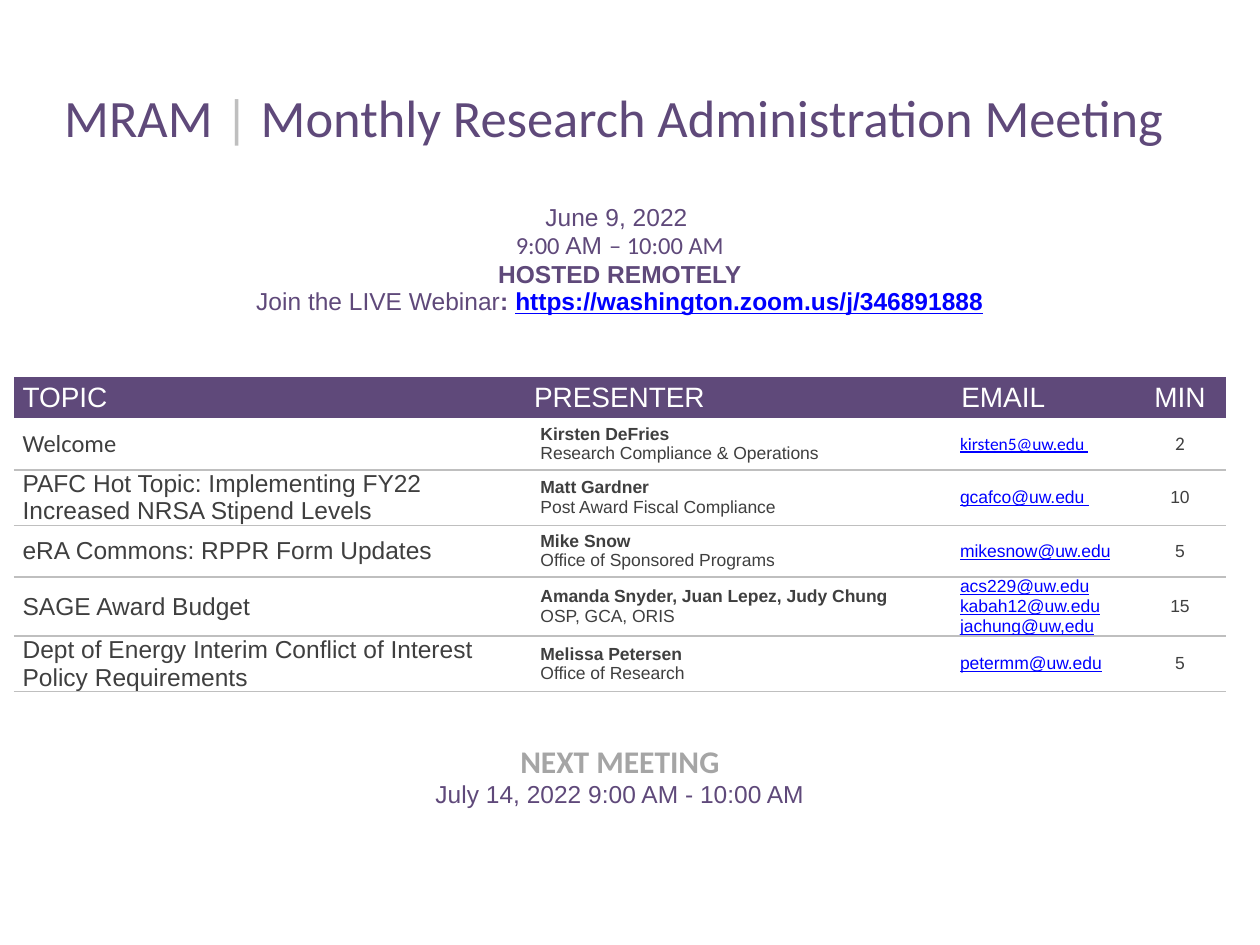
from lxml.etree import SubElement
from pptx import Presentation
from pptx.dml.color import RGBColor
from pptx.enum.text import MSO_ANCHOR, PP_ALIGN
from pptx.oxml.ns import qn
from pptx.util import Inches, Pt

INK = {"plum": "5F497A", "gray": "BFBFBF", "mid": "A5A5A5",
       "dark": "3F3F3F", "blue": "0000FF", "white": "FFFFFF"}

TITLE = [[("MRAM ", "Calibri", 30, "plum", False),
          ("|", "Calibri", 30, "gray", False),
          (" Monthly Research Administration Meeting ", "Calibri", 30, "plum", False)]]
WHEN = [[("June 9, 2022 ", "Arial", 14, "plum", False)],
        [("9:00 ", "Calibri", 14, "plum", False),
         ("AM ", "Arial", 14, "plum", False),
         ("– 10:00 AM", "Calibri", 14, "plum", False)],
        [("HOSTED REMOTELY", "Arial", 14, "plum", True)],
        [("Join the LIVE Webinar", "Arial", 14, "plum", False),
         (": ", "Arial", 14, "plum", True),
         ("https://washington.zoom.us/j/346891888", "Arial", 14, "blue", True)]]
NEXT = [[("NEXT MEETING", "Calibri", 18, "mid", True)],
        [("July 14, 2022 9:00 AM - 10:00 AM", "Arial", 14, "plum", False)]]
HEADS = ["TOPIC", "PRESENTER", "EMAIL", "MIN"]
TALKS = [
    ("Welcome", "Kirsten DeFries", "Research Compliance & Operations",
     ["kirsten5@uw.edu "], "2"),
    ("PAFC Hot Topic: Implementing FY22 Increased NRSA Stipend Levels",
     "Matt Gardner", "Post Award Fiscal Compliance", ["gcafco@uw.edu "], "10"),
    ("eRA Commons: RPPR Form Updates", "Mike Snow",
     "Office of Sponsored Programs", ["mikesnow@uw.edu"], "5"),
    ("SAGE Award Budget", "Amanda Snyder, Juan Lepez, Judy Chung",
     "OSP, GCA, ORIS", ["acs229@uw.edu", "kabah12@uw.edu", "jachung@uw,edu"], "15"),
    ("Dept of Energy Interim Conflict of Interest Policy Requirements",
     "Melissa Petersen", "Office of Research", ["petermm@uw.edu"], "5"),
]
WIDTHS = [4.06, 3.33, 1.5, 0.73]
HEIGHTS = [0.62, 1.79, 0.33, 0.41, 0.44, 0.41, 0.47, 0.44, 0.95]
FIRST = 3
LAST = FIRST + len(TALKS)


def rule(props, side, shown):
    line = SubElement(props, qn("a:" + side), w=str(Pt(1)))
    if shown:
        fill = SubElement(line, qn("a:solidFill"))
        SubElement(fill, qn("a:srgbClr"), val=INK["gray"])
    else:
        SubElement(line, qn("a:noFill"))


def write(row, col, paras, fill="white", center=False, left=0.07, right=0.07,
          top=0, bottom=0, anchor=MSO_ANCHOR.MIDDLE):
    cell = grid.cell(row, col)
    props = cell._tc.get_or_add_tcPr()
    for side, shown in [("lnL", False), ("lnR", False),
                        ("lnT", FIRST < row <= LAST), ("lnB", FIRST <= row < LAST)]:
        rule(props, side, shown)
    cell.fill.solid()
    cell.fill.fore_color.rgb = RGBColor.from_string(INK[fill])
    cell.margin_left, cell.margin_right = Inches(left), Inches(right)
    cell.margin_top, cell.margin_bottom = Inches(top), Inches(bottom)
    cell.vertical_anchor = anchor
    frame = cell.text_frame
    frame.text = "\n".join("" for _ in paras)
    for para, runs in zip(frame.paragraphs, paras):
        para.alignment = PP_ALIGN.CENTER if center else PP_ALIGN.LEFT
        for text, face, size, ink, bold in runs:
            run = para.add_run()
            run.text = text
            font = run.font
            font.name, font.size, font.bold = face, Pt(size), bold
            font.underline = ink == "blue"
            font.color.rgb = RGBColor.from_string(INK[ink])


deck = Presentation()
deck.slide_width, deck.slide_height = Inches(10), Inches(7.5)
slide = deck.slides.add_slide(deck.slide_layouts[6])
grid = slide.shapes.add_table(
    len(HEIGHTS), len(WIDTHS), Inches(0.11), Inches(0.58),
    Inches(sum(WIDTHS)), Inches(sum(HEIGHTS))).table
grid.first_row = grid.horz_banding = False
for col, width in zip(grid.columns, WIDTHS):
    col.width = Inches(width)
for row, height in zip(grid.rows, HEIGHTS):
    row.height = Inches(height)
for row in (0, 1, LAST):
    grid.cell(row, 0).merge(grid.cell(row, len(WIDTHS) - 1))

write(0, 0, TITLE, center=True, anchor=MSO_ANCHOR.BOTTOM)
write(1, 0, WHEN, center=True, bottom=0.48, anchor=MSO_ANCHOR.BOTTOM)
for col, head in enumerate(HEADS):
    write(2, col, [[(head, "Arial", 16, "white", False)]], fill="plum",
          center=head == "MIN", left=0.13 if head == "EMAIL" else 0.07)
for row, (topic, name, office, mails, mins) in enumerate(TALKS, FIRST):
    face, size = ("Calibri", 11) if row == FIRST else ("Arial", 10)
    write(row, 0, [[(topic, face, 14, "dark", False)]])
    write(row, 1, [[(name, "Arial", 10, "dark", True)],
                   [(office, "Arial", 10, "dark", False)]], left=0.12, right=0.12)
    write(row, 2, [[(mail, face, 10, "blue", False)] for mail in mails],
          left=0.12, right=0.12)
    write(row, 3, [[(mins, face, size, "dark", False)]], center=True)
write(LAST, 0, NEXT, center=True, top=0.41, anchor=MSO_ANCHOR.TOP)

deck.save("out.pptx")
